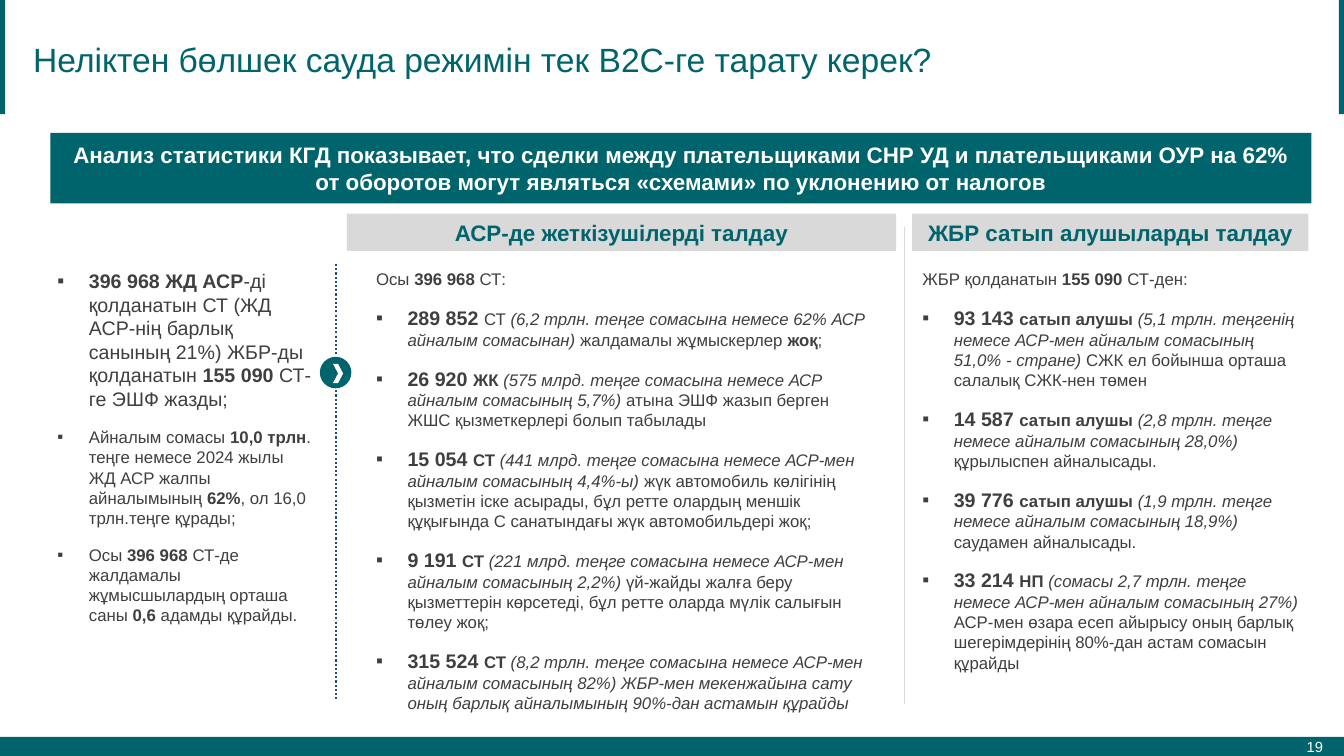
from lxml import etree
from pptx import Presentation
from pptx.dml.color import RGBColor
from pptx.enum.dml import MSO_LINE
from pptx.enum.shapes import MSO_CONNECTOR, MSO_SHAPE
from pptx.enum.text import MSO_ANCHOR, MSO_AUTO_SIZE, PP_ALIGN
from pptx.oxml.ns import qn
from pptx.util import Pt

TEAL, GREY, TEXT, WHITE, NAVY = "00646C", "D9D9D9", "3F3F3F", "FFFFFF", "1F4E79"
INDENT = 22.5

# Runs are (style, text): b bold, i italic, + large
LEFT = [
    [("b+", "396 968 ЖД АСР"),
     ("+", "-ді қолданатын СТ (ЖД АСР-нің барлық санының 21%) ЖБР-ды қолданатын "),
     ("b+", "155 090 "), ("+", "СТ-ге ЭШФ жазды;")],
    [("", "Айналым сомасы "), ("b", "10,0 трлн"),
     ("", ". теңге немесе 2024 жылы ЖД АСР жалпы айналымының "),
     ("b", "62%"), ("", ", ол 16,0 трлн.теңге құрады;")],
    [("", "Осы "), ("b", "396 968 "), ("", "СТ-де жалдамалы жұмысшылардың орташа саны "),
     ("b", "0,6 "), ("", "адамды құрайды.")],
]
SUPPLIERS_INTRO = [("", "Осы "), ("b", "396 968 "), ("", "СТ:")]
SUPPLIERS = [
    [("b+", "289 852 "), ("", "СТ "),
     ("i", "(6,2 трлн. теңге сомасына немесе 62% АСР айналым сомасынан) "),
     ("", "жалдамалы жұмыскерлер "), ("b", "жоқ"), ("", ";")],
    [("b+", "26 920 "), ("b", "ЖК "),
     ("i", "(575 млрд. теңге сомасына немесе АСР айналым сомасының 5,7%) "),
     ("", "атына ЭШФ жазып берген ЖШС қызметкерлері болып табылады")],
    [("b+", "15 054 "), ("b", "СТ "),
     ("i", "(441 млрд. теңге сомасына немесе АСР-мен айналым сомасының 4,4%-ы) "),
     ("", "жүк автомобиль көлігінің қызметін іске асырады, бұл ретте олардың "
          "меншік құқығында С санатындағы жүк автомобильдері жоқ;")],
    [("b+", "9 191 "), ("b", "СТ "),
     ("i", "(221 млрд. теңге сомасына немесе АСР-мен айналым сомасының 2,2%) "),
     ("", "үй-жайды жалға беру қызметтерін көрсетеді, бұл ретте оларда мүлік "
          "салығын төлеу жоқ;")],
    [("b+", "315 524 "), ("b", "СТ "),
     ("i", "(8,2 трлн. теңге сомасына немесе АСР-мен айналым сомасының 82%) "
           "ЖБР-мен мекенжайына сату оның барлық айналымының 90%-дан астамын құрайды")],
]
BUYERS_INTRO = [("", "ЖБР қолданатын "), ("b", "155 090 "), ("", "СТ-ден:")]
BUYERS = [
    [("b+", "93 143 "), ("b", "сатып алушы "),
     ("i", "(5,1 трлн. теңгенің немесе АСР-мен айналым сомасының 51,0% - стране)"),
     ("", " СЖК ел бойынша орташа салалық СЖК-нен төмен")],
    [("b+", "14 587 "), ("b", "сатып алушы "),
     ("i", "(2,8 трлн. теңге немесе айналым сомасының 28,0%) "),
     ("", "құрылыспен айналысады.")],
    [("b+", "39 776 "), ("b", "сатып алушы "),
     ("i", "(1,9 трлн. теңге немесе айналым сомасының 18,9%) "),
     ("", "саудамен айналысады.")],
    [("b+", "33 214 "), ("b", "НП "),
     ("i", "(сомасы 2,7 трлн. теңге немесе АСР-мен айналым сомасының 27%) "),
     ("", "АСР-мен өзара есеп айырысу оның барлық шегерімдерінің 80%-дан астам "
          "сомасын құрайды")],
]


def rgb(value):
    return RGBColor.from_string(value)


def style(font, size, color, bold=False, italic=False):
    font.name, font.size, font.bold, font.italic = "Arial", Pt(size), bold, italic
    font.color.rgb = rgb(color)


def place(sp, box):
    sp.left, sp.top, sp.width, sp.height = [Pt(v) for v in box]


def add_block(s, box, fill, kind=MSO_SHAPE.RECTANGLE):
    sp = s.shapes.add_shape(kind, *[Pt(v) for v in box])
    sp.shadow.inherit = False
    sp.fill.solid()
    sp.fill.fore_color.rgb = rgb(fill)
    sp.line.fill.background()
    return sp


def add_label(sp, text, size, color, bold=False, align=PP_ALIGN.CENTER):
    tf = sp.text_frame
    tf.word_wrap = True
    tf.vertical_anchor = MSO_ANCHOR.MIDDLE
    p = tf.paragraphs[0]
    p.text = text
    p.alignment = align
    style(p.runs[0].font, size, color, bold)


def add_rule(s, x, top, bottom, color, width, dash=None):
    line = s.shapes.add_connector(MSO_CONNECTOR.STRAIGHT, Pt(x), Pt(top), Pt(x), Pt(bottom))
    line.line.color.rgb = rgb(color)
    line.line.width = Pt(width)
    if dash:
        line.line.dash_style = dash
    etree.SubElement(line._element.spPr, qn("a:effectLst"))


def set_bullet(p, char):
    pPr = p._p.get_or_add_pPr()
    indent = Pt(INDENT) if char else 0
    pPr.set("marL", str(indent))
    pPr.set("indent", str(-indent))
    if char:
        etree.SubElement(pPr, qn("a:buFont"), typeface="Arial")
        etree.SubElement(pPr, qn("a:buChar"), char=char)
    else:
        etree.SubElement(pPr, qn("a:buNone"))


# Frame: footer band with the page number, bars at the top corners
def add_frame(s, box):
    x, y, w, h = box
    add_block(s, (x, y + h - 13.7, w, 13.7), TEAL)
    for bar_x in (x, x + w - 3.6):
        add_block(s, (bar_x, y, 3.6, 81.5), TEAL)
    number = s.shapes.add_textbox(Pt(x + w - 102), Pt(y + h - 21.5), Pt(93), Pt(29))
    tf = number.text_frame
    tf.margin_left = tf.margin_right = Pt(6)
    tf.margin_top = tf.margin_bottom = Pt(3)
    add_label(number, "19", 10.5, WHITE, align=PP_ALIGN.RIGHT)


def add_title(s, box, text):
    title = s.shapes.title
    place(title, box)
    add_label(title, text, 24, TEAL, align=PP_ALIGN.LEFT)


# List column: optional intro line, then bulleted paragraphs
def add_list(sp, box, items, intro=None, before=0, after=12):
    place(sp, box)
    tf = sp.text_frame
    tf.word_wrap = True
    tf.auto_size = MSO_AUTO_SIZE.NONE
    tf.vertical_anchor = MSO_ANCHOR.TOP
    for i, runs in enumerate([intro] + items if intro else items):
        p = tf.paragraphs[0] if i == 0 else tf.add_paragraph()
        set_bullet(p, None if runs is intro else "▪")
        p.alignment = PP_ALIGN.LEFT
        p.space_before = Pt(before if i else 0)
        p.space_after = Pt(after)
        for marks, text in runs:
            r = p.add_run()
            r.text = text
            style(r.font, 14 if "+" in marks else 12, TEXT, "b" in marks, "i" in marks)


# Dotted divider with a round arrow badge
def add_arrow_divider(s, box):
    x, y, w, h = box
    add_rule(s, x + w / 2, y, y + h, NAVY, 1.5, MSO_LINE.ROUND_DOT)
    badge_y = y + 66.3
    add_block(s, (x, badge_y, w, w), TEAL, MSO_SHAPE.OVAL)
    add_block(s, (x + 9.4, badge_y + 5, 7.2, 13.7), WHITE, MSO_SHAPE.CHEVRON)


def main():
    prs = Presentation()
    prs.slide_width, prs.slide_height = Pt(960), Pt(540)
    s = prs.slides.add_slide(prs.slide_layouts[4])
    bodies = {ph.placeholder_format.idx: ph for ph in s.placeholders}

    add_frame(s, (0, 0, 960, 540))
    add_title(s, (16.5, 14.4, 903.6, 55.4),
              "Неліктен бөлшек сауда режимін тек B2C-ге тарату керек?")

    # Banner and column headings
    banner = add_block(s, (36, 95, 900.7, 50.4), TEAL)
    add_label(banner, "Анализ статистики КГД показывает, что сделки между плательщиками "
              "СНР УД и плательщиками ОУР на 62% от оборотов могут являться «схемами» "
              "по уклонению от налогов", 16, WHITE, True)
    for x, w, text in ((247.7, 392.4, "АСР-де жеткізушілерді талдау"),
                       (651.6, 283, "ЖБР сатып алушыларды талдау")):
        add_label(add_block(s, (x, 152.6, w, 26.6), GREY), text, 16, TEAL, True)

    # Three list columns
    top = 188.6
    add_list(bodies[1], (33.8, top, 198.7, 264.2), LEFT)
    add_list(bodies[2], (261.4, top, 371.5, 317.5), SUPPLIERS, SUPPLIERS_INTRO)
    add_list(bodies[4], (651.6, top, 283.7, 311.8), BUYERS, BUYERS_INTRO, 6, 6)
    unused = bodies[3]._element
    unused.getparent().remove(unused)

    # Dividers
    add_arrow_divider(s, (228.5, top, 22.5, 311.8))
    add_rule(s, 645.8, 162, 502.6, GREY, 0.5)
    prs.save("out.pptx")


if __name__ == "__main__":
    main()
